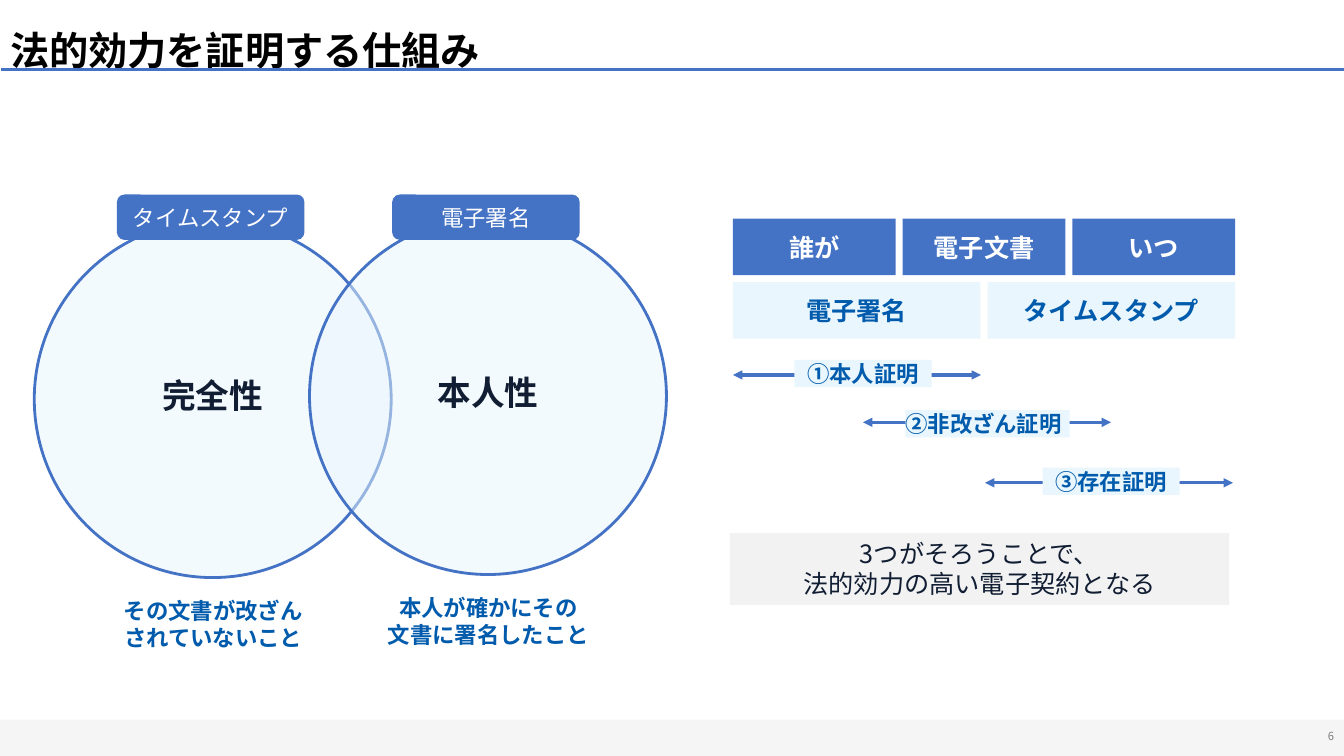
from pptx import Presentation
from pptx.dml.color import RGBColor
from pptx.enum.shapes import MSO_CONNECTOR as Conn, MSO_SHAPE as Form
from pptx.enum.text import MSO_ANCHOR as Anchor, MSO_AUTO_SIZE as Fit, PP_ALIGN as Align
from pptx.oxml.ns import qn
from pptx.util import Inches, Pt
from lxml.etree import SubElement

# Content
TITLE = "法的効力を証明する仕組み"
PAGE = "6"
# tag, heart, note lines, circle left and top
RINGS = [
    ("タイムスタンプ", "完全性", ["その文書が改ざん", "されていないこと"], 0.34, 2.19),
    ("電子署名", "本人性", ["本人が確かにその", "文書に署名したこと"], 3.07, 2.16),
]
GRID = [["誰が", "電子文書", "いつ"], ["電子署名", "タイムスタンプ"]]
# text, arrow left and top, label left, top and width
PROOFS = [
    ("①本人証明", 7.27, 3.72, 7.88, 3.57, 1.36),
    ("②非改ざん証明", 8.56, 4.19, 8.98, 4.07, 1.63),
    ("③存在証明", 9.77, 4.79, 10.34, 4.64, 1.36),
]
RESULT = ["3つがそろうことで、", "法的効力の高い電子契約となる"]

# Look
FONT = "Noto Sans CJK JP"
BLUE = RGBColor(0x44, 0x72, 0xC4)
DEEP = RGBColor(0x00, 0x5B, 0xAC)
PALE = RGBColor(0xE9, 0xF6, 0xFD)
NAVY = RGBColor(0x10, 0x1D, 0x32)
WHITE = RGBColor(0xFF, 0xFF, 0xFF)
BLACK = RGBColor(0, 0, 0)
GREY = RGBColor(0x7D, 0x7D, 0x7D)
BAND = RGBColor(0xF5, 0xF5, 0xF5)
PANEL = RGBColor(0xF2, 0xF2, 0xF2)
WIDE, HIGH = 13.33, 7.5
DISC = 3.54
LEFT, TOP, SPAN, CELL, GAP = 7.27, 2.17, 4.98, 0.56, 0.07

deck = Presentation()
deck.slide_width, deck.slide_height = Inches(WIDE), Inches(HIGH)
slide = deck.slides.add_slide(deck.slide_layouts[5])
shapes = slide.shapes


def write(shape, lines, size, color, bold=False, align=Align.CENTER,
          anchor=Anchor.TOP, inset=True, wrap=True):
    frame = shape.text_frame
    frame.auto_size = Fit.NONE
    frame.word_wrap = wrap
    frame.vertical_anchor = anchor
    frame.margin_left = frame.margin_right = Inches(0.1 if inset else 0)
    frame.margin_top = frame.margin_bottom = Inches(0.05 if inset else 0)
    for i, line in enumerate(lines):
        para = frame.add_paragraph() if i else frame.paragraphs[0]
        para.alignment = align
        run = para.add_run()
        run.text = line
        font = run.font
        font.name, font.size, font.bold = FONT, Pt(size), bold
        font.color.rgb = color
        SubElement(font._element, qn("a:ea")).set("typeface", FONT)


def block(form, x, y, w, h, fill):
    shape = shapes.add_shape(form, *map(Inches, (x, y, w, h)))
    shape.shadow.inherit = False
    shape.fill.solid()
    shape.fill.fore_color.rgb = fill
    shape.line.fill.background()
    return shape


def label(x, y, w, h, lines, size, color, **style):
    write(shapes.add_textbox(*map(Inches, (x, y, w, h))), lines, size, color, **style)


def rule(x, y, w, heads=False):
    line = shapes.add_connector(Conn.STRAIGHT, *map(Inches, (x, y, x + w, y)))
    line.line.color.rgb = BLUE
    line.line.width = Pt(2.25)
    props = line._element.spPr
    SubElement(props, qn("a:effectLst"))
    if heads:
        for end in ("a:headEnd", "a:tailEnd"):
            SubElement(props.find(qn("a:ln")), qn(end)).set("type", "triangle")


# Title, rule and footer
block(Form.RECTANGLE, 0, 7.14, WIDE, HIGH - 7.14, BAND)
rule(0.01, 0.69, WIDE)
label(WIDE - 3, 7.1, 3, 0.4, [PAGE], 8, GREY, align=Align.RIGHT, anchor=Anchor.MIDDLE)
title = shapes.title
title.left, title.top, title.width, title.height = map(Inches, (0, 0.21, 9.06, 0.45))
write(title, [TITLE], 28, BLACK, bold=True, align=Align.LEFT)

# Overlapping circles
for tag, heart, note, x, y in RINGS:
    disc = block(Form.OVAL, x, y, DISC, DISC, PALE)
    disc.line.color.rgb, disc.line.width = BLUE, Pt(2)
    tint = disc._element.spPr.find(qn("a:solidFill"))[0]
    SubElement(tint, qn("a:alpha")).set("val", "50000")
for tag, heart, note, x, y in RINGS:
    label(x + 1.17, y + 1.48, 1.21, 0.5, [heart], 24, NAVY, bold=True,
          align=Align.LEFT, wrap=False)
    label(x + 0.57, y + 3.69, 2.41, 0.64, note, 16, DEEP, bold=True)
    plate = block(Form.ROUNDED_RECTANGLE, x + 0.82, 1.93, 1.86, 0.45, BLUE)
    write(plate, [tag], 16, WHITE, anchor=Anchor.MIDDLE)

# Grid of question and answer
for r, (row, fill, ink) in enumerate(zip(GRID, (BLUE, PALE), (WHITE, DEEP))):
    w = (SPAN - GAP * (len(row) - 1)) / len(row)
    for c, text in enumerate(row):
        cell = block(Form.RECTANGLE, LEFT + c * (w + GAP), TOP + r * (CELL + GAP), w, CELL, fill)
        write(cell, [text], 18, ink, bold=True, anchor=Anchor.MIDDLE)

# Proof arrows
for text, x, y, lx, ly, lw in PROOFS:
    rule(x, y, 2.46, heads=True)
    plate = block(Form.RECTANGLE, lx, ly, lw, 0.27, PALE)
    side = Align.LEFT if text.startswith("②") else Align.CENTER
    write(plate, [text], 16, DEEP, bold=True, align=side, inset=False)

# Result
panel = block(Form.RECTANGLE, 7.24, 5.29, 4.95, 0.71, PANEL)
write(panel, RESULT, 18, NAVY)

deck.save("out.pptx")
